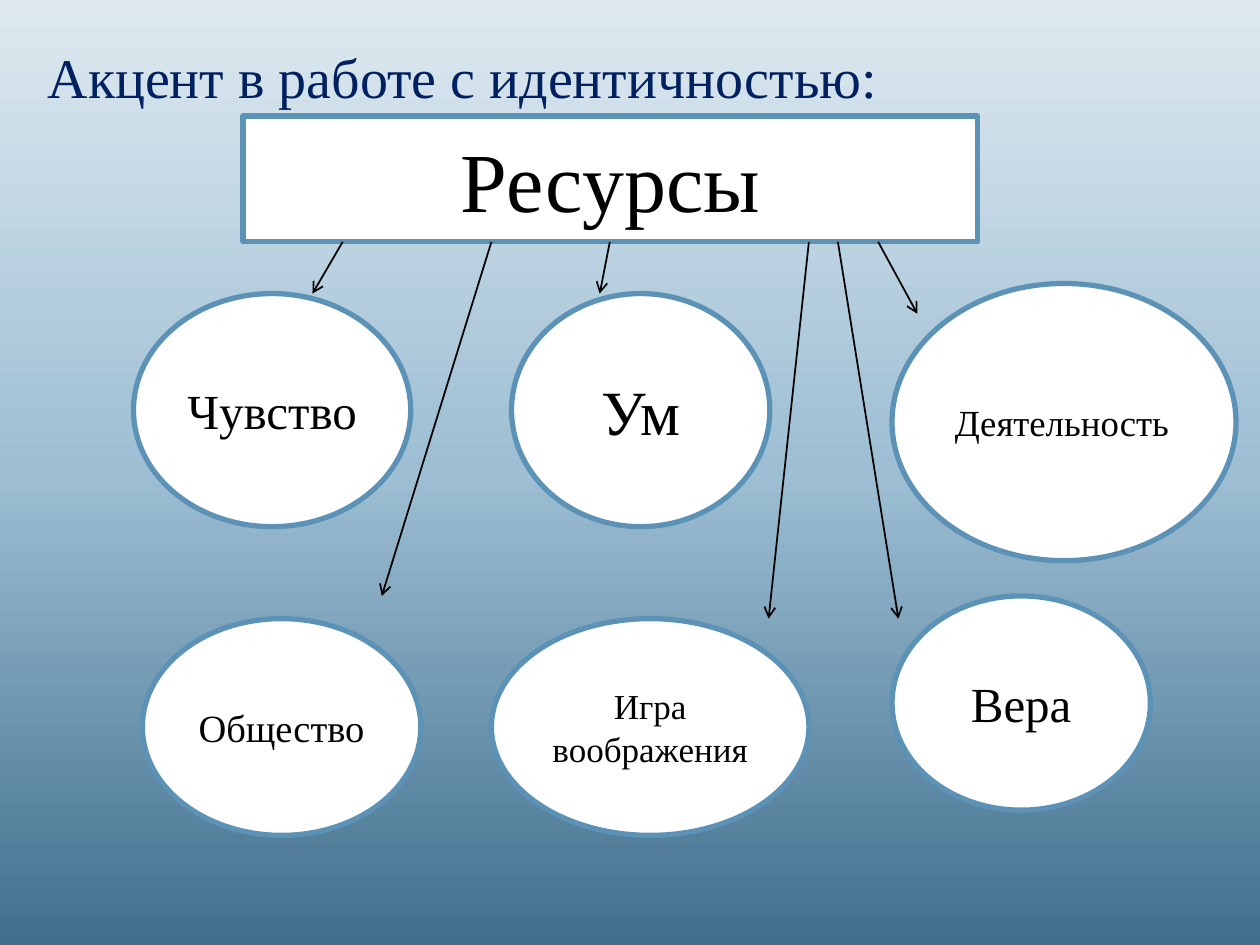
from copy import deepcopy

from lxml import etree
from pptx import Presentation
from pptx.dml.color import RGBColor
from pptx.enum import shapes, text
from pptx.oxml.ns import qn
from pptx.util import Inches, Pt

FONT = "Times New Roman"
BLACK, WHITE, NAVY, STEEL = "000000", "FFFFFF", "002060", "5C92B5"
BACKGROUND = [(0, "DEE9F0"), (0.5, "9DBED3"), (1, "406F8D")]

CENTER, LEFT = text.PP_ALIGN.CENTER, text.PP_ALIGN.LEFT
RECTANGLE, OVAL = shapes.MSO_SHAPE.RECTANGLE, shapes.MSO_SHAPE.OVAL

# label, (left, top, width, height), text size, alignment
RESOURCES = [
    ("Ум", (4.06, 2.33, 2.05, 1.85), 36, CENTER),
    ("Чувство", (1.06, 2.33, 2.2, 1.85), 28, CENTER),
    ("Деятельность", (7.08, 2.25, 2.73, 2.2), 21, LEFT),
    ("Общество", (1.13, 4.91, 2.21, 1.72), 22, CENTER),
    ("Игра воображения", (3.9, 4.91, 2.52, 1.72), 20, CENTER),
    ("Вера", (7.08, 4.73, 2.05, 1.7), 28, CENTER),
]

HEADER_BOTTOM = 1.92
# start x on the lower edge of the header, arrow tip
ARROWS = [
    (2.72, (2.48, 2.33)),
    (4.84, (4.76, 2.33)),
    (6.97, (7.28, 2.49)),
    (3.9, (3.03, 4.73)),
    (6.42, (6.1, 4.91)),
    (6.65, (7.13, 4.91)),
]


def rgb(value):
    return RGBColor.from_string(value)


def paint_background(slide):
    fill = slide.background.fill
    fill.gradient()
    fill.gradient_angle = 270
    stop_list = slide.element.find(".//" + qn("a:gsLst"))
    stop_list.append(deepcopy(stop_list[0]))
    for stop, (position, color) in zip(fill.gradient_stops, BACKGROUND):
        stop.position = position
        stop.color.rgb = rgb(color)


def write(frame, words, size, color, alignment):
    frame.word_wrap = True
    frame.text = words
    paragraph = frame.paragraphs[0]
    paragraph.alignment = alignment
    font = paragraph.runs[0].font
    font.name, font.size = FONT, Pt(size)
    font.color.rgb = rgb(color)


def add_title(slide, words):
    title = slide.shapes.add_textbox(*map(Inches, (0.28, 0.29, 9.53, 7.01)))
    write(title.text_frame, words, 32, NAVY, LEFT)
    title.text_frame.paragraphs[0].space_before = Pt(6)


def add_node(slide, kind, words, box, size, alignment=CENTER):
    node = slide.shapes.add_shape(kind, *map(Inches, box))
    node.shadow.inherit = False
    node.fill.solid()
    node.fill.fore_color.rgb = rgb(WHITE)
    node.line.color.rgb = rgb(STEEL)
    node.line.width = Pt(3)
    node.text_frame.vertical_anchor = text.MSO_ANCHOR.MIDDLE
    write(node.text_frame, words, size, BLACK, alignment)


def add_arrow(slide, start, tip):
    arrow = slide.shapes.add_connector(
        shapes.MSO_CONNECTOR.STRAIGHT, *map(Inches, (*start, *tip)))
    arrow.line.color.rgb = rgb(BLACK)
    arrow.line.width = Pt(1)
    etree.SubElement(arrow.line._get_or_add_ln(), qn("a:tailEnd"), type="arrow")
    etree.SubElement(arrow.element.spPr, qn("a:effectLst"))


def main():
    deck = Presentation()
    deck.slide_width, deck.slide_height = Inches(10), Inches(7.5)
    slide = deck.slides.add_slide(deck.slide_layouts[6])
    paint_background(slide)
    add_title(slide, "Акцент в работе с идентичностью:")
    add_node(slide, RECTANGLE, "Ресурсы", (1.93, 0.92, 5.83, 1), 48)
    for words, box, size, alignment in RESOURCES:
        add_node(slide, OVAL, words, box, size, alignment)
    for start_x, tip in ARROWS:
        add_arrow(slide, (start_x, HEADER_BOTTOM), tip)
    deck.save("out.pptx")


if __name__ == "__main__":
    main()
